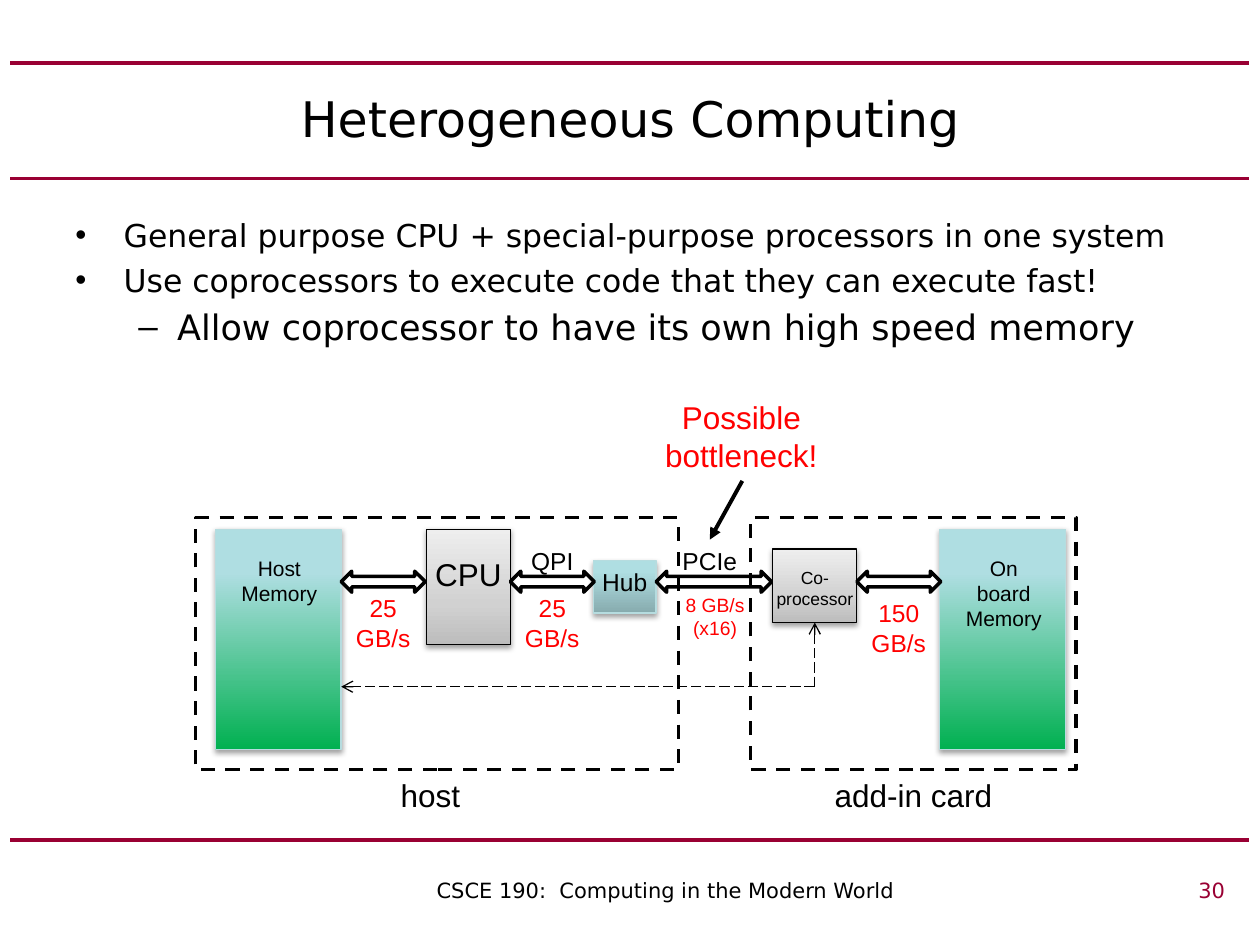
import pptx
import pptx.util
from pptx.dml.color import RGBColor
from pptx.enum.dml import MSO_LINE
from pptx.enum.shapes import MSO_CONNECTOR, MSO_SHAPE
from pptx.enum.text import MSO_ANCHOR, PP_ALIGN
from pptx.oxml.ns import qn
from pptx.oxml.xmlchemy import OxmlElement

PX = 7620
BLACK = RGBColor(0x00, 0x00, 0x00)
RED = RGBColor(0xFF, 0x00, 0x00)
GARNET = RGBColor(0x99, 0x00, 0x33)
TEAL_EDGE = RGBColor(0xB6, 0xDC, 0xDF)
GRAY_STOPS = [(0, RGBColor(0xBD, 0xBD, 0xBD)), (35, RGBColor(0xD1, 0xD1, 0xD1)), (100, RGBColor(0xEE, 0xEE, 0xEE))]
PALE_STOPS = [(80, RGBColor(0xAF, 0xDE, 0xE2)), (100, RGBColor(0xAF, 0xE0, 0xE4))]
TEAL_STOPS = [(0, RGBColor(0x87, 0xAB, 0xAE))] + PALE_STOPS
GREEN_STOPS = [(0, RGBColor(0x00, 0xB0, 0x50))] + PALE_STOPS
HEADING_FONT = "DejaVu Sans"
LABEL_FONT = "Arial"


def px(*values):
    """Convert px lengths to EMU."""
    return [value * PX for value in values]


def add_child(parent, tag, **attrs):
    """Append a DrawingML element with attributes and return it."""
    child = OxmlElement(tag)
    for name, value in attrs.items():
        child.set(name, str(value))
    parent.append(child)
    return child


def set_font(p, size, color=BLACK, name=LABEL_FONT):
    """Format every run of a paragraph alike."""
    p.font.size = pptx.util.Pt(size)
    p.font.name = name
    p.font.color.rgb = color


def add_label(s, box, text, size, color=BLACK):
    """Add a centred, wrapping text box."""
    tf = s.shapes.add_textbox(*px(*box)).text_frame
    tf.word_wrap = True
    tf.text = text
    for p in tf.paragraphs:
        p.alignment = PP_ALIGN.CENTER
        set_font(p, size, color)


def add_outline(s, kind, box, dash=None):
    """Add an unfilled shape with a black outline."""
    sp = s.shapes.add_shape(kind, *px(*box))
    sp.shadow.inherit = False
    sp.fill.background()
    sp.line.color.rgb = BLACK
    sp.line.width = pptx.util.Pt(2)
    sp.line.dash_style = dash
    return sp


def add_bus(s, box):
    """Add a two-headed block arrow."""
    add_outline(s, MSO_SHAPE.LEFT_RIGHT_ARROW, box)


def add_block(s, box, stops, edge=TEAL_EDGE):
    """Add a rectangle with a bottom-to-top gradient and a soft shadow."""
    sp = s.shapes.add_shape(MSO_SHAPE.RECTANGLE, *px(*box))
    sp.fill.gradient()
    sp.fill.gradient_angle = 90
    gradient = sp._element.spPr.find(".//" + qn("a:gsLst"))
    for stop in list(gradient):
        gradient.remove(stop)
    for percent, color in stops:
        stop = add_child(gradient, "a:gs", pos=percent * 1000)
        add_child(stop, "a:srgbClr", val=color)
    sp.line.color.rgb = edge
    sp.line.width = pptx.util.Pt(0.75)
    sp.shadow.inherit = False
    effects = sp._element.spPr.find(qn("a:effectLst"))
    shadow = add_child(effects, "a:outerShdw", blurRad=40000, dist=21000, dir=5400000, rotWithShape=0)
    add_child(add_child(shadow, "a:srgbClr", val=BLACK), "a:alpha", val=36000)
    return sp


def add_line(s, start, end, width, color=BLACK, dash=None, head=None, tail=None):
    """Add a straight connector with optional arrowheads."""
    cn = s.shapes.add_connector(MSO_CONNECTOR.STRAIGHT, *px(*start, *end))
    cn.line.color.rgb = color
    cn.line.width = pptx.util.Pt(width)
    cn.line.dash_style = dash
    ln = cn.line._get_or_add_ln()
    for tag, kind in (("a:headEnd", head), ("a:tailEnd", tail)):
        if kind:
            add_child(ln, tag, type=kind)
    add_child(cn._element.spPr, "a:effectLst")
    return cn


def add_title(s, box, text):
    """Place the title between its two rules."""
    sp = s.shapes.title
    sp.left, sp.top, sp.width, sp.height = px(*box)
    tf = sp.text_frame
    tf.text = text
    tf.vertical_anchor = MSO_ANCHOR.MIDDLE
    p = tf.paragraphs[0]
    p.alignment = PP_ALIGN.CENTER
    set_font(p, 28, name=HEADING_FONT)


def add_bullets(s, box, items):
    """Add two-level bullets given as (level, text)."""
    levels = [("•", 46, 46, 18), ("–", 97, 37, 20)]
    tf = s.shapes.add_textbox(*px(*box)).text_frame
    tf.word_wrap = True
    for i, (level, text) in enumerate(items):
        mark, margin, hang, size = levels[level]
        p = tf.add_paragraph() if i else tf.paragraphs[0]
        p.text = text
        p.level = level
        if i:
            p.space_before = pptx.util.Pt(4)
        pPr = p._p.get_or_add_pPr()
        pPr.set("marL", str(margin * PX))
        pPr.set("indent", str(-hang * PX))
        add_child(pPr, "a:buFont", typeface=LABEL_FONT)
        add_child(pPr, "a:buChar", char=mark)
        set_font(p, size, name=HEADING_FONT)


def add_host(s, x, y):
    """Draw the host with its memory, processor and hub."""
    memory = add_block(s, (x + 19, y + 11, 120, 210), GREEN_STOPS)
    add_block(s, (x + 220, y + 11, 80, 110), GRAY_STOPS, BLACK)
    add_block(s, (x + 379, y + 41, 60, 50), TEAL_STOPS)
    add_label(s, (x + 30, y + 30, 100, 61), "Host Memory", 12)
    add_label(s, (x + 210, y + 30, 100, 50), "CPU", 18)
    add_label(s, (x + 369, y + 41, 80, 41), "Hub", 14)
    add_label(s, (x + 300, y + 21, 80, 41), "QPI", 14)
    for left in (139, 300):
        add_bus(s, (x + left, y + 51, 80, 20))
        add_label(s, (x + left, y + 66, 80, 68), "25 GB/s", 14, RED)
    add_outline(s, MSO_SHAPE.RECTANGLE, (x, y, 460, 240), MSO_LINE.DASH)
    add_label(s, (x + 129, y + 240, 190, 48), "host", 18)
    return memory


def add_card(s, x, y):
    """Draw the add-in card with its coprocessor and memory."""
    coprocessor = add_block(s, (x + 21, y + 30, 80, 70), GRAY_STOPS, BLACK)
    add_block(s, (x + 180, y + 11, 120, 210), GREEN_STOPS)
    add_label(s, (x + 11, y + 41, 100, 53), "Co-processor", 10)
    add_label(s, (x + 191, y + 30, 100, 85), "On board\nMemory", 12)
    add_bus(s, (x + 101, y + 51, 80, 20))
    add_label(s, (x + 101, y + 71, 80, 68), "150 GB/s", 14, RED)
    add_outline(s, MSO_SHAPE.RECTANGLE, (x, y, 310, 240), MSO_LINE.DASH)
    add_label(s, (x + 60, y + 240, 190, 48), "add-in card", 18)
    return coprocessor


def add_link(s, x, y):
    """Draw the PCIe link and the bottleneck callout above it."""
    add_bus(s, (x + 29, y + 171, 110, 20))
    add_label(s, (x + 40, y + 141, 80, 41), "PCIe", 14)
    add_label(s, (x + 45, y + 186, 80, 56), "8 GB/s (x16)", 11, RED)
    add_label(s, (x, y, 220, 85), "Possible bottleneck!", 18, RED)
    add_line(s, (x + 111, y + 85), (x + 80, y + 141), 2.25, tail="triangle")


def add_transfer_path(s, memory, coprocessor, y):
    """Draw the dashed path from the coprocessor to host memory."""
    right = (memory.left + memory.width) // PX
    middle = (coprocessor.left + coprocessor.width // 2) // PX
    bottom = (coprocessor.top + coprocessor.height) // PX
    rise = add_line(s, (middle, bottom), (middle, y), 0.75, dash=MSO_LINE.LONG_DASH, head="arrow")
    rise.begin_connect(coprocessor, 2)
    add_line(s, (middle, y), (right, y), 0.75, dash=MSO_LINE.LONG_DASH, tail="arrow")


def add_footer(s, box, text, number):
    """Add the course name and a right-tabbed slide number."""
    tf = s.shapes.add_textbox(*px(*box)).text_frame
    tf.word_wrap = True
    p = tf.paragraphs[0]
    p.add_run().text = text + "\t"
    r = p.add_run()
    r.text = number
    tabs = add_child(p._p.get_or_add_pPr(), "a:tabLst")
    add_child(tabs, "a:tab", pos=(box[2] - 25) * PX, algn="r")
    set_font(p, 12, name=HEADING_FONT)
    r.font.color.rgb = GARNET


def main():
    """Build and save the slide."""
    prs = pptx.Presentation()
    prs.slide_width, prs.slide_height = px(1200, 900)
    s = prs.slides.add_slide(prs.slide_layouts[5])
    for y in (60, 170, 800):
        add_line(s, (10, y), (1190, y), 2.25, GARNET)
    add_title(s, (60, 60, 1080, 104), "Heterogeneous Computing")
    add_bullets(s, (60, 200, 1080, 150), [
        (0, "General purpose CPU + special-purpose processors in one system"),
        (0, "Use coprocessors to execute code that they can execute fast!"),
        (1, "Allow coprocessor to have its own high speed memory"),
    ])
    memory = add_host(s, 186, 493)
    coprocessor = add_card(s, 715, 493)
    add_link(s, 596, 373)
    add_transfer_path(s, memory, coprocessor, 654)
    add_footer(s, (404, 830, 776, 40), "CSCE 190:  Computing in the Modern World", "30")
    prs.save("out.pptx")


if __name__ == "__main__":
    main()
